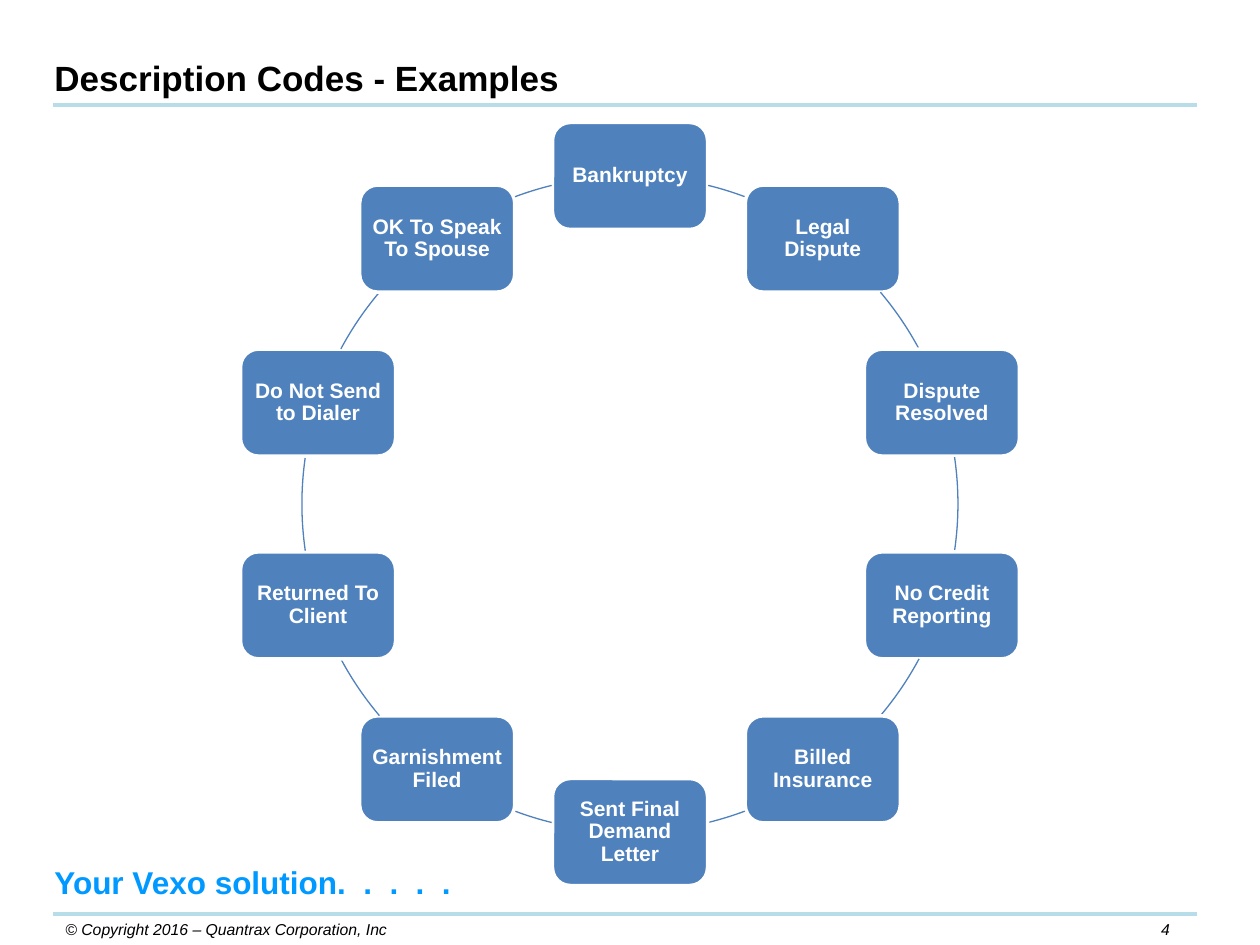
import math
from dataclasses import dataclass

import pptx
import pptx.dml.color
import pptx.enum.shapes
import pptx.enum.text
import pptx.oxml.ns
import pptx.util
from lxml import etree

EMU_PER_PX = 914400 / 126
ALIGN = pptx.enum.text.PP_ALIGN
ANCHOR = pptx.enum.text.MSO_ANCHOR
SHAPE = pptx.enum.shapes.MSO_SHAPE


@dataclass(frozen=True)
class Theme:
    font: str = "Arial"
    black: str = "000000"
    white: str = "FFFFFF"
    node: str = "4F81BD"
    rule: str = "B7DEE8"
    tagline: str = "0099FF"
    title_size: int = 20
    tagline_size: int = 18
    node_size: int = 12
    footer_size: int = 9
    rule_width: float = 2.25
    border_width: float = 2
    arc_width: float = 0.75


@dataclass(frozen=True)
class Label:
    text: str
    left: int
    top: int
    width: int
    height: int
    size: int
    color: str
    bold: bool = False
    italic: bool = False
    align: ALIGN = ALIGN.LEFT
    line_spacing: float = 1.0


@dataclass(frozen=True)
class Ring:
    center_x: int = 630
    center_y: int = 504
    radius: int = 328
    node_width: int = 155
    node_height: int = 107
    # The rounded corners add about 5 px to this on every side
    node_inset: int = 5


THEME = Theme()
RING = Ring()

LABELS = [
    Label("4", 1134, 914, 63, 32, THEME.footer_size, THEME.black,
          italic=True, align=ALIGN.CENTER),
    Label("© Copyright 2016 – Quantrax Corporation, Inc", 53, 914, 410, 32,
          THEME.footer_size, THEME.black, italic=True),
    Label("Description Codes - Examples", 42, 50, 924, 55,
          THEME.title_size, THEME.black, bold=True),
    Label("Your Vexo solution.  .  .  .  .", 42, 861, 651, 53,
          THEME.tagline_size, THEME.tagline, bold=True, line_spacing=0.9),
]

# Clockwise from the top
CODES = [
    "Bankruptcy", "Legal Dispute", "Dispute Resolved", "No Credit Reporting",
    "Billed Insurance", "Sent Final Demand Letter", "Garnishment Filed",
    "Returned To Client", "Do Not Send to Dialer", "OK To Speak To Spouse",
]

# Degrees clockwise from the top; the left half repeats these half a turn on
ARC_SPANS = [(13.8, 20.5), (49.8, 61.8), (81.8, 98.2), (118.2, 130.2), (159.5, 166.2)]


def px(length: float) -> int:
    return round(length * EMU_PER_PX)


def rgb(color: str) -> pptx.dml.color.RGBColor:
    return pptx.dml.color.RGBColor.from_string(color)


def set_values(target, values: dict) -> None:
    for name, value in values.items():
        setattr(target, name, value)


def set_line(line, color: str, width: float) -> None:
    line.color.rgb = rgb(color)
    line.width = pptx.util.Pt(width)


def write_text(frame, text: str, size: int, color: str, bold: bool, italic: bool,
               align: ALIGN, line_spacing: float) -> None:
    frame.word_wrap = True
    paragraph = frame.paragraphs[0]
    set_values(paragraph, {"alignment": align, "line_spacing": line_spacing})
    run = paragraph.add_run()
    run.text = text
    set_values(run.font, {"name": THEME.font, "size": pptx.util.Pt(size),
                          "bold": bold, "italic": italic})
    run.font.color.rgb = rgb(color)


def draw_rule(slide, top: int) -> None:
    connector = slide.shapes.add_connector(
        pptx.enum.shapes.MSO_CONNECTOR.STRAIGHT, px(53), px(top), px(1197), px(top))
    set_line(connector.line, THEME.rule, THEME.rule_width)
    etree.SubElement(connector._element.spPr, pptx.oxml.ns.qn("a:effectLst"))


def draw_label(slide, label: Label) -> None:
    shape = slide.shapes.add_textbox(
        px(label.left), px(label.top), px(label.width), px(label.height))
    write_text(shape.text_frame, label.text, label.size, label.color, label.bold,
               label.italic, label.align, label.line_spacing)


def draw_node(slide, text: str, degrees: float) -> None:
    angle = math.radians(degrees)
    center_x = RING.center_x + RING.radius * math.sin(angle)
    center_y = RING.center_y - RING.radius * math.cos(angle)
    shape = slide.shapes.add_shape(
        SHAPE.ROUNDED_RECTANGLE,
        px(center_x - RING.node_width / 2), px(center_y - RING.node_height / 2),
        px(RING.node_width), px(RING.node_height))
    shape.shadow.inherit = False
    shape.fill.solid()
    shape.fill.fore_color.rgb = rgb(THEME.node)
    set_line(shape.line, THEME.white, THEME.border_width)
    inset = px(RING.node_inset)
    set_values(shape.text_frame, {
        "margin_left": inset, "margin_right": inset, "margin_top": inset,
        "margin_bottom": inset, "vertical_anchor": ANCHOR.MIDDLE})
    write_text(shape.text_frame, text, THEME.node_size, THEME.white, True, False,
               ALIGN.CENTER, 0.9)


def draw_arc(slide, start: float, end: float) -> None:
    diameter = px(2 * RING.radius)
    shape = slide.shapes.add_shape(
        SHAPE.ARC, px(RING.center_x - RING.radius), px(RING.center_y - RING.radius),
        diameter, diameter)
    shape.shadow.inherit = False
    shape.fill.background()
    set_line(shape.line, THEME.node, THEME.arc_width)
    # Arc angles start at three o'clock, in 60000ths of a degree
    for index, degrees in enumerate((start, end)):
        shape.adjustments[index] = (degrees - 90) % 360 * 60000 / 100000


def main() -> None:
    presentation = pptx.Presentation()
    set_values(presentation, {"slide_width": px(1260), "slide_height": px(945)})
    slide = presentation.slides.add_slide(presentation.slide_layouts[6])

    # Title, tagline and footer
    for top in (105, 914):
        draw_rule(slide, top)
    for label in LABELS:
        draw_label(slide, label)

    # Ring of description codes
    step = 360 / len(CODES)
    for index, code in enumerate(CODES):
        draw_node(slide, code, index * step)
        half_turns, span = divmod(index, len(ARC_SPANS))
        start, end = ARC_SPANS[span]
        draw_arc(slide, start + 180 * half_turns, end + 180 * half_turns)

    presentation.save("out.pptx")


if __name__ == "__main__":
    main()
